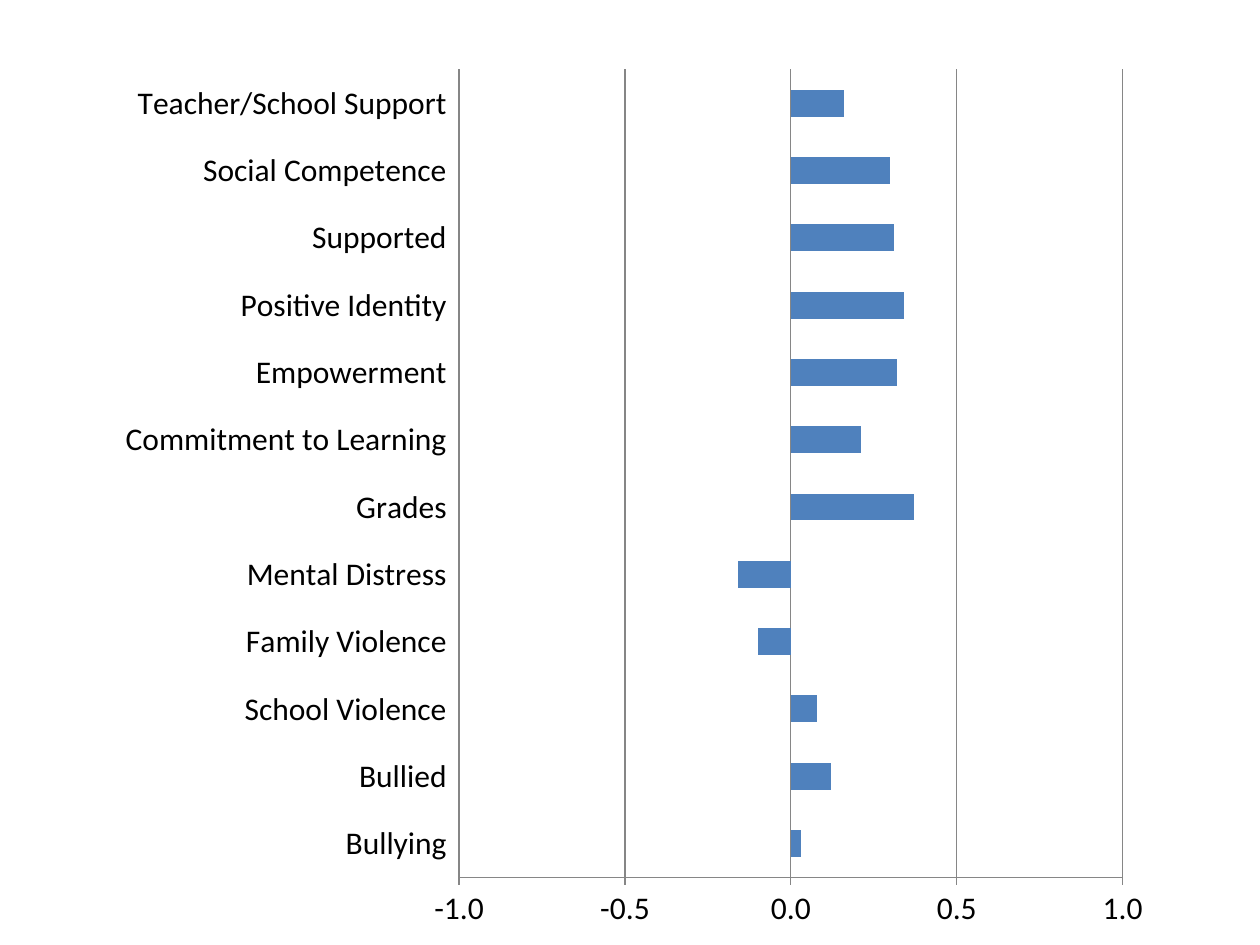
from lxml import etree
from pptx import Presentation
from pptx.chart.data import CategoryChartData
from pptx.dml.color import RGBColor
from pptx.enum.chart import XL_CHART_TYPE, XL_TICK_LABEL_POSITION, XL_TICK_MARK
from pptx.util import Inches, Pt

BAR_CLUSTERED = XL_CHART_TYPE.BAR_CLUSTERED
LABELS_LOW = XL_TICK_LABEL_POSITION.LOW
TICK_NONE, TICK_OUTSIDE = XL_TICK_MARK.NONE, XL_TICK_MARK.OUTSIDE
CHART_NS = "http://schemas.openxmlformats.org/drawingml/2006/chart"
COLORS = {"text": "000000", "bar": "4F81BD", "line": "868686"}

# Listed from the bottom bar to the top bar
SCORES = {
    "Bullying": 0.03,
    "Bullied": 0.12,
    "School Violence": 0.08,
    "Family Violence": -0.1,
    "Mental Distress": -0.16,
    "Grades": 0.37,
    "Commitment to Learning": 0.21,
    "Empowerment": 0.32,
    "Positive Identity": 0.34,
    "Supported": 0.31,
    "Social Competence": 0.3,
    "Teacher/School Support": 0.16,
}
# Inner plot area as shares of the chart's size
PLOT_SHARES = {"x": 0.335, "y": 0.02, "w": 0.627, "h": 0.903}

presentation = Presentation()
presentation.slide_width = Inches(10)
presentation.slide_height = Inches(7.5)
slide = presentation.slides.add_slide(presentation.slide_layouts[6])

# Bar chart
chart_data = CategoryChartData(number_format="0.00")
chart_data.categories = list(SCORES)
chart_data.add_series("Series 1", list(SCORES.values()))
chart = slide.shapes.add_chart(
    BAR_CLUSTERED, Inches(0.83), Inches(0.41), Inches(8.4), Inches(7.1), chart_data
).chart
chart.has_legend = False
chart.has_title = False
chart.font.name = "Calibri"
chart.font.size = Pt(18)
chart.font.color.rgb = RGBColor.from_string(COLORS["text"])

# Bars
plot = chart.plots[0]
plot.gap_width = 150
plot.vary_by_categories = False
series = plot.series[0]
series.invert_if_negative = False
series.format.fill.solid()
series.format.fill.fore_color.rgb = RGBColor.from_string(COLORS["bar"])

# Axes and gridlines
category_axis, value_axis = chart.category_axis, chart.value_axis
category_axis.tick_label_position = LABELS_LOW
category_axis.major_tick_mark = TICK_NONE
category_axis.has_major_gridlines = False
value_axis.minimum_scale = -1
value_axis.maximum_scale = 1
value_axis.major_unit = 0.5
value_axis.major_tick_mark = TICK_OUTSIDE
value_axis.has_major_gridlines = True
value_axis.tick_labels.number_format = "###0.0"
value_axis.tick_labels.number_format_is_linked = False
for axis in (category_axis, value_axis):
    axis.minor_tick_mark = TICK_NONE
for lined_part in (category_axis, value_axis, value_axis.major_gridlines):
    lined_part.format.line.color.rgb = RGBColor.from_string(COLORS["line"])
    lined_part.format.line.width = Pt(0.75)

# Fixed plot area
plot_area = chart.element.find(f".//{{{CHART_NS}}}plotArea")
for automatic_layout in plot_area.findall(f"{{{CHART_NS}}}layout"):
    plot_area.remove(automatic_layout)
layout = etree.Element(f"{{{CHART_NS}}}layout")
manual_layout = etree.SubElement(layout, f"{{{CHART_NS}}}manualLayout")
settings = {"layoutTarget": "inner", "xMode": "edge", "yMode": "edge", **PLOT_SHARES}
for tag, value in settings.items():
    etree.SubElement(manual_layout, f"{{{CHART_NS}}}{tag}", val=str(value))
plot_area.insert(0, layout)

presentation.save("out.pptx")
